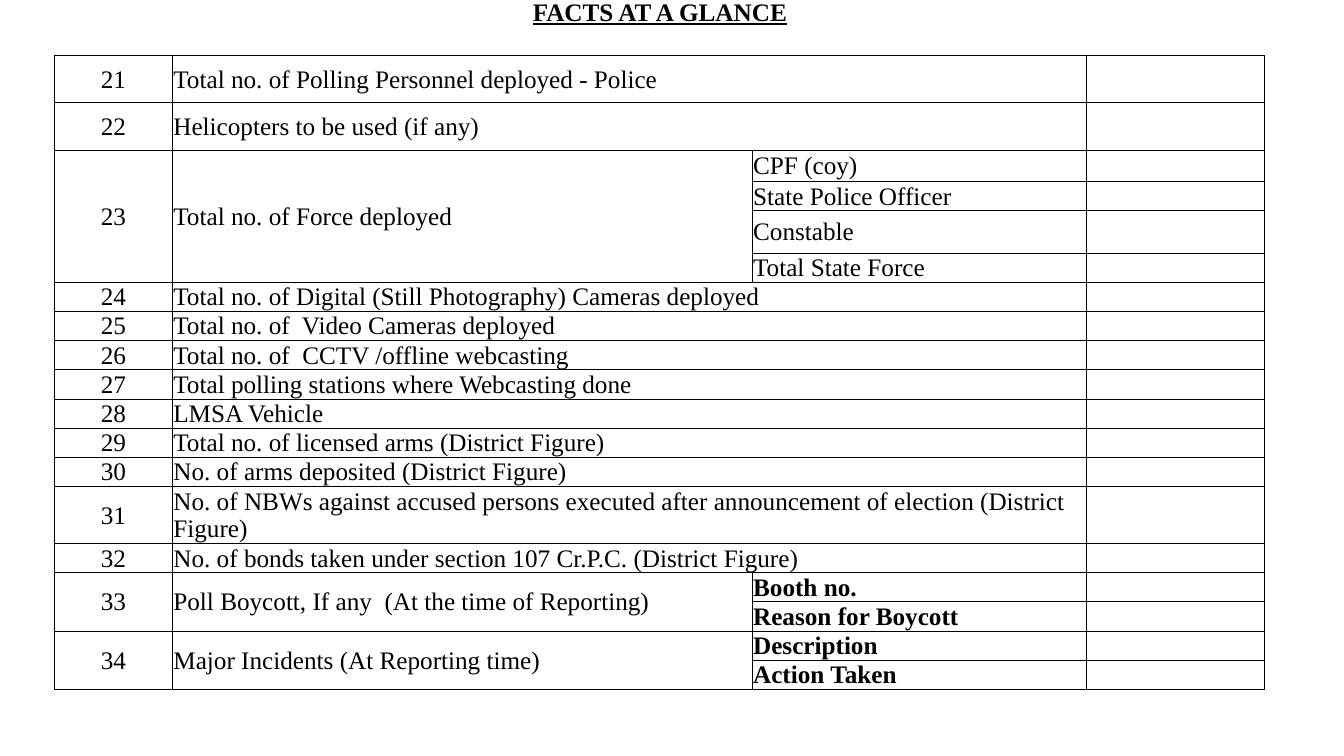
import pptx
import pptx.util
import pptx.dml.color
import pptx.enum.text
import pptx.oxml
import pptx.oxml.ns
from dataclasses import dataclass

Inches, Pt = pptx.util.Inches, pptx.util.Pt
Align = pptx.enum.text.PP_ALIGN
Anchor = pptx.enum.text.MSO_ANCHOR


@dataclass(frozen=True)
class Theme:
    font: str = "Times New Roman"
    size: float = 18
    ink: str = "000000"
    paper: str = "FFFFFF"
    rule: float = 0.5


THEME = Theme()
WIDE, HIGH = 13.33, 7.5
COLS = [1.17, 5.75, 3.31, 1.77]
ROW = 0.29
TALL = {0: 0.47, 1: 0.47, 2: 0.31, 4: 0.42, 13: 0.55}

# Each fact: label, then its sub-rows
FACTS = [
    ("Total no. of Polling Personnel deployed - Police", []),
    ("Helicopters to be used (if any)", []),
    ("Total no. of Force deployed",
     ["CPF (coy)", "State Police Officer", "Constable", "Total State Force"]),
    ("Total no. of Digital (Still Photography) Cameras deployed", []),
    ("Total no. of  Video Cameras deployed", []),
    ("Total no. of  CCTV /offline webcasting", []),
    ("Total polling stations where Webcasting done", []),
    ("LMSA Vehicle", []),
    ("Total no. of licensed arms (District Figure)", []),
    ("No. of arms deposited (District Figure)", []),
    ("No. of NBWs against accused persons executed after announcement "
     "of election (District Figure)", []),
    ("No. of bonds taken under section 107 Cr.P.C. (District Figure)", []),
    ("Poll Boycott, If any  (At the time of Reporting)",
     ["Booth no.", "Reason for Boycott"]),
    ("Major Incidents (At Reporting time)", ["Description", "Action Taken"]),
]
FIRST = 21
BOLD_FROM = 33


def write(frame, text, align=Align.LEFT, bold=False, under=False):
    """Put one formatted line of text in a frame."""
    para = frame.paragraphs[0]
    para.alignment = align
    run = para.add_run()
    run.text = text
    font = run.font
    font.name, font.size = THEME.font, Pt(THEME.size)
    font.bold, font.underline = bold, under
    font.color.rgb = pptx.dml.color.RGBColor.from_string(THEME.ink)


def style(cell):
    """Give a cell its margins, rules, fill and empty-line size."""
    cell.margin_left = cell.margin_right = cell.margin_top = Inches(0.01)
    cell.margin_bottom = 0
    cell.vertical_anchor = Anchor.MIDDLE
    props = cell._tc.get_or_add_tcPr()
    for side in "LRTB":
        props.append(pptx.oxml.parse_xml(
            f'<a:ln{side} {pptx.oxml.ns.nsdecls("a")} w="{Pt(THEME.rule)}">'
            f'<a:solidFill><a:srgbClr val="{THEME.ink}"/></a:solidFill>'
            f'</a:ln{side}>'))
    cell.fill.solid()
    cell.fill.fore_color.rgb = pptx.dml.color.RGBColor.from_string(THEME.paper)
    if not cell.text_frame.text:
        cell.text_frame.paragraphs[0]._p.append(pptx.oxml.parse_xml(
            f'<a:endParaRPr {pptx.oxml.ns.nsdecls("a")} sz="1200">'
            f'<a:latin typeface="{THEME.font}"/></a:endParaRPr>'))


def head(slide, left, top, width, height):
    """Title line above the table."""
    title = slide.shapes.title
    title.left, title.top = Inches(left), Inches(top)
    title.width, title.height = Inches(width), Inches(height)
    frame = title.text_frame
    frame.word_wrap = False
    frame.vertical_anchor = Anchor.MIDDLE
    write(frame, "FACTS AT A GLANCE", align=Align.CENTER, bold=True, under=True)


def facts(slide, left, top, width):
    """Numbered table of facts, scaled to the given width."""
    count = sum(max(1, len(subs)) for _, subs in FACTS)
    rows = [TALL.get(i, ROW) for i in range(count)]
    table = slide.shapes.add_table(
        count, len(COLS), Inches(left), Inches(top),
        Inches(width), Inches(sum(rows))).table
    table.first_row = table.horz_banding = False
    for col, share in zip(table.columns, COLS):
        col.width = Inches(width * share / sum(COLS))
    for row, height in zip(table.rows, rows):
        row.height = Inches(height)

    # Text and merges
    at = 0
    for num, (label, subs) in enumerate(FACTS, FIRST):
        write(table.cell(at, 0).text_frame, str(num), align=Align.CENTER)
        write(table.cell(at, 1).text_frame, label)
        for i, sub in enumerate(subs):
            write(table.cell(at + i, 2).text_frame, sub, bold=num >= BOLD_FROM)
        if subs:
            end = at + len(subs) - 1
            for col in (0, 1):
                table.cell(at, col).merge(table.cell(end, col))
        else:
            table.cell(at, 1).merge(table.cell(at, 2))
        at += max(1, len(subs))

    for cell in table.iter_cells():
        style(cell)


def main():
    deck = pptx.Presentation()
    deck.slide_width, deck.slide_height = Inches(WIDE), Inches(HIGH)
    slide = deck.slides.add_slide(deck.slide_layouts[5])
    facts(slide, 0.54, 0.55, sum(COLS))
    head(slide, 5.17, -0.09, 2.75, 0.4)
    deck.save("out.pptx")


if __name__ == "__main__":
    main()
